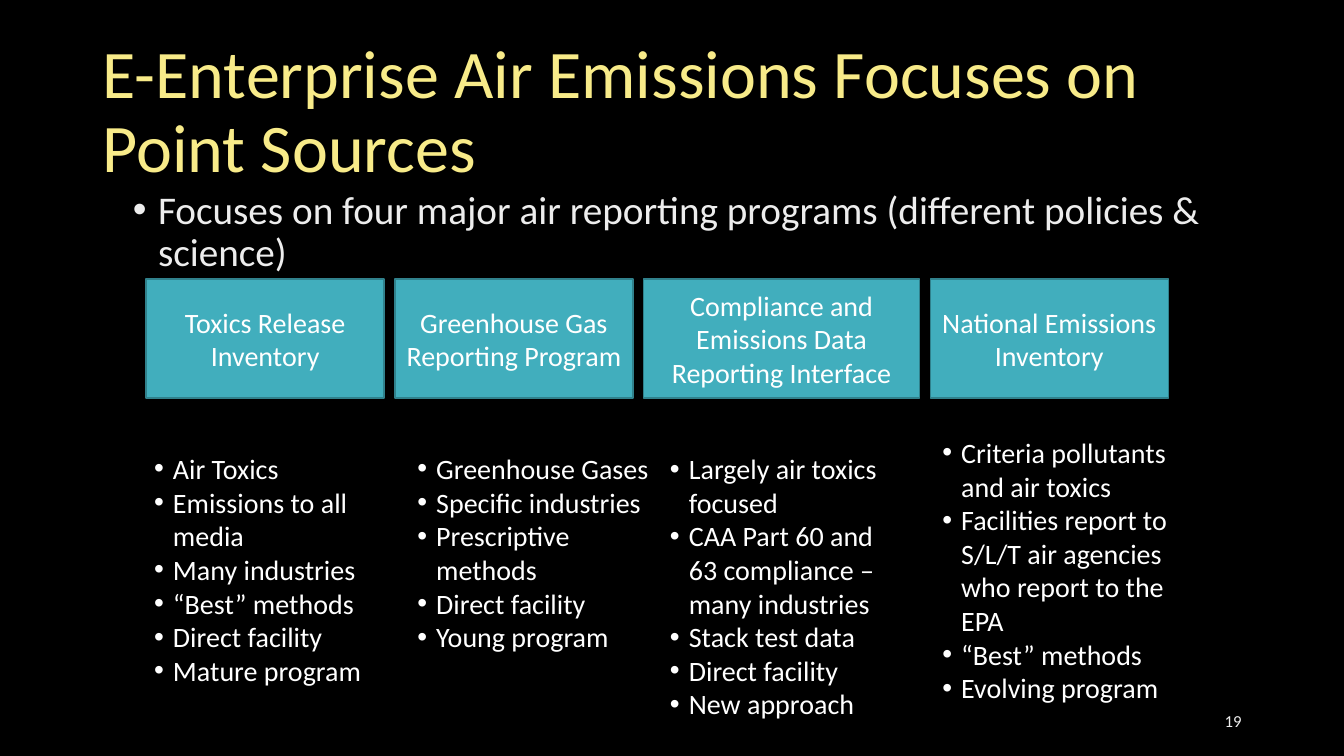
from dataclasses import dataclass

from lxml import etree
from pptx import Presentation
from pptx.dml.color import RGBColor
from pptx.enum import shapes, text
from pptx.oxml import ns
from pptx.util import Pt


@dataclass(frozen=True)
class Theme:
    font: str = "Calibri"
    background: str = "000000"
    title: str = "F8EB89"
    intro: str = "EDEDED"
    body: str = "FFFFFF"
    box: str = "41AEBD"
    box_line: str = "30818C"
    title_size: float = 48.6
    intro_size: float = 28
    body_size: float = 20
    number_size: float = 12


PROGRAMS = [
    # heading, box width, list left, list top, list height, points
    ("Toxics Release Inventory", 170, 103, 319, 177,
     ["Air Toxics", "Emissions to all media", "Many industries",
      "“Best” methods", "Direct facility", "Mature program"]),
    ("Greenhouse Gas Reporting Program", 170, 291, 319, 177,
     ["Greenhouse Gases", "Specific industries", "Prescriptive methods",
      "Direct facility", "Young program"]),
    ("Compliance and Emissions Data\vReporting Interface", 197, 471.5, 319, 201,
     ["Largely air toxics focused",
      "CAA Part 60 and 63 compliance – many industries",
      "Stack test data", "Direct facility", "New approach"]),
    ("National Emissions Inventory", 170, 666, 307.5, 250,
     ["Criteria pollutants and air toxics",
      "Facilities report to S/L/T air agencies who report to the EPA",
      "“Best” methods", "Evolving program"]),
]
BOX_LEFT, BOX_TOP, BOX_HEIGHT, BOX_GAP = 104.4, 199.4, 85, 7.7
LIST_WIDTH, LIST_INDENT = 180, 13.5


class SlideBuilder:
    def __init__(self, slide, theme):
        self.slide = slide
        self.theme = theme
        slide.background.fill.solid()
        slide.background.fill.fore_color.rgb = RGBColor.from_string(theme.background)

    def set_text(self, frame, lines, size, color, align=text.PP_ALIGN.LEFT,
                 anchor=text.MSO_ANCHOR.TOP, indent=0, spacing=1.0):
        """Fill a text frame, one paragraph a line; an indent adds bullets."""
        frame.text = "\n".join(lines)
        frame.word_wrap = True
        frame.auto_size = text.MSO_AUTO_SIZE.NONE
        frame.vertical_anchor = anchor
        for paragraph in frame.paragraphs:
            paragraph.alignment = align
            paragraph.line_spacing = spacing
            if indent:
                self.add_bullet(paragraph, indent)
            for run in paragraph.runs:
                run.font.name = self.theme.font
                run.font.size = Pt(size)
                run.font.color.rgb = RGBColor.from_string(color)

    def add_bullet(self, paragraph, indent):
        properties = paragraph._p.get_or_add_pPr()
        properties.set("marL", str(Pt(indent)))
        properties.set("indent", str(-Pt(indent)))
        etree.SubElement(properties, ns.qn("a:buFont"), typeface="Arial")
        etree.SubElement(properties, ns.qn("a:buChar"), char="•")

    def title(self, words, left, top, width, height):
        heading = self.slide.shapes.title
        heading.left, heading.top = Pt(left), Pt(top)
        heading.width, heading.height = Pt(width), Pt(height)
        self.set_text(heading.text_frame, [words], self.theme.title_size,
                      self.theme.title, anchor=text.MSO_ANCHOR.MIDDLE, spacing=0.9)

    def text_box(self, lines, left, top, width, height, size, color, **style):
        area = self.slide.shapes.add_textbox(Pt(left), Pt(top), Pt(width), Pt(height))
        self.set_text(area.text_frame, lines, size, color, **style)

    def program_box(self, name, left, top, width, height):
        box = self.slide.shapes.add_shape(
            shapes.MSO_SHAPE.RECTANGLE, Pt(left), Pt(top), Pt(width), Pt(height))
        box.shadow.inherit = False
        box.fill.solid()
        box.fill.fore_color.rgb = RGBColor.from_string(self.theme.box)
        box.line.color.rgb = RGBColor.from_string(self.theme.box_line)
        box.line.width = Pt(1)
        self.set_text(box.text_frame, [name], self.theme.body_size, self.theme.body,
                      align=text.PP_ALIGN.CENTER, anchor=text.MSO_ANCHOR.MIDDLE)


def main():
    deck = Presentation()
    deck.slide_width, deck.slide_height = Pt(960), Pt(540)
    theme = Theme()
    title_only = deck.slide_layouts.get_by_name("Title Only")
    page = SlideBuilder(deck.slides.add_slide(title_only), theme)

    page.title("E-Enterprise Air Emissions Focuses on Point Sources", 66, 29, 828, 104.4)
    page.text_box(
        ["Focuses on four major air reporting programs (different policies & science)"],
        87.8, 132.5, 805.7, 64, theme.intro_size, theme.intro, indent=18, spacing=0.9)
    page.text_box(["19"], 678, 500.5, 216, 28.8, theme.number_size, theme.intro,
                  align=text.PP_ALIGN.RIGHT, anchor=text.MSO_ANCHOR.MIDDLE)

    box_left = BOX_LEFT
    for name, box_width, list_left, list_top, list_height, points in PROGRAMS:
        page.program_box(name, box_left, BOX_TOP, box_width, BOX_HEIGHT)
        page.text_box(points, list_left, list_top, LIST_WIDTH, list_height,
                      theme.body_size, theme.body, indent=LIST_INDENT)
        box_left += box_width + BOX_GAP

    deck.save("out.pptx")


if __name__ == "__main__":
    main()
